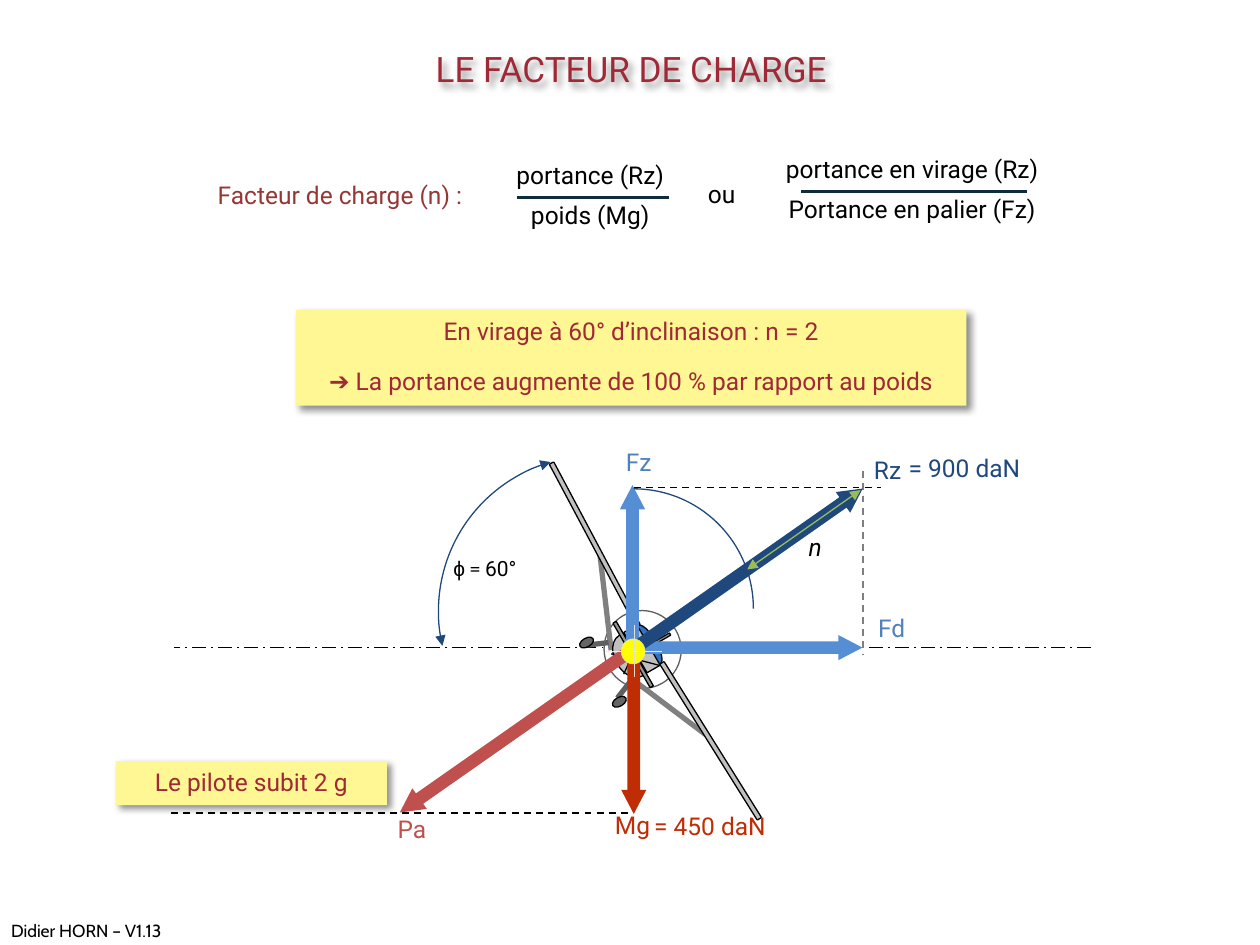
from lxml import etree
from pptx import Presentation
from pptx.dml.color import RGBColor
from pptx.enum.dml import MSO_LINE
from pptx.enum.shapes import MSO_CONNECTOR, MSO_SHAPE
from pptx.enum.text import MSO_ANCHOR, PP_ALIGN
from pptx.oxml.ns import qn
from pptx.util import Inches, Pt

STRAIGHT = MSO_CONNECTOR.STRAIGHT
ARC, OVAL, RECT = MSO_SHAPE.ARC, MSO_SHAPE.OVAL, MSO_SHAPE.RECTANGLE
BAR, UP_ARROW = MSO_SHAPE.ROUNDED_RECTANGLE, MSO_SHAPE.UP_ARROW
DASH, DASH_DOT = MSO_LINE.DASH, MSO_LINE.LONG_DASH_DOT
LEFT, CENTER, TOP = PP_ALIGN.LEFT, PP_ALIGN.CENTER, MSO_ANCHOR.TOP
BLACK, RED, NAVY, SKY, BLUE = "000000", "9F2936", "1F497D", "558ED5", "4F81BD"
BRICK, RUST, YELLOW, RULE = "C0504D", "C02C04", "FFF793", "0E2C3E"
SILVER, GREY, DARK_GREY, CREAM = "C0C0C0", "969696", "5F5F5F", "E3DED1"


def color(value):
    """Turn a hex string into a colour."""
    return RGBColor.from_string(value)


def style_line(line, value, width, dash=None, heads=False):
    """Set colour, width, dash and arrowheads of a line."""
    line.color.rgb = color(value)
    line.width = Pt(width)
    if dash:
        line.dash_style = dash
    if heads:
        element = line.color._xFill.getparent()
        for name in ("a:headEnd", "a:tailEnd"):
            etree.SubElement(element, qn(name), type="triangle")


def add_shadow(shape):
    """Give a shape a soft shadow to the lower right."""
    shape.shadow.inherit = False
    effects = shape._element.spPr.find(qn("a:effectLst"))
    outer = etree.SubElement(effects, qn("a:outerShdw"), blurRad=str(Pt(4)),
                             dist=str(Pt(3)), dir="2700000", algn="tl", rotWithShape="0")
    black = etree.SubElement(outer, qn("a:srgbClr"), val=BLACK)
    etree.SubElement(black, qn("a:alpha"), val="43000")


def write(shape, paragraphs, value, size=14, align=CENTER, after=0, font="Roboto", italic=False):
    """Fill a text frame; a paragraph is a string or a list of (text, font) runs."""
    frame = shape.text_frame
    frame.word_wrap = True
    frame.vertical_anchor = TOP
    margins = {"margin_left": 0.1, "margin_right": 0.1, "margin_top": 0.05, "margin_bottom": 0.05}
    for name, inches in margins.items():
        setattr(frame, name, Inches(inches))
    for index, content in enumerate(paragraphs):
        paragraph = frame.add_paragraph() if index else frame.paragraphs[0]
        paragraph.alignment = align
        paragraph.space_after = Pt(after)
        runs = [(content, font)] if isinstance(content, str) else content
        for text, face in runs:
            run = paragraph.add_run()
            run.text = text
            formats = {"name": face, "size": Pt(size), "bold": False, "italic": italic}
            for name, setting in formats.items():
                setattr(run.font, name, setting)
            run.font.color.rgb = color(value)


class Region:
    """A part of the slide whose contents are placed from its top left corner."""

    def __init__(self, slide, left, top):
        """Keep the slide and the corner in inches."""
        self.shapes, self.left, self.top = slide.shapes, left, top

    def place(self, left, top):
        """Give a slide position for a point of the region."""
        return Inches(self.left + left), Inches(self.top + top)

    def line(self, start, end, value, width, **style):
        """Draw a straight line."""
        line = self.shapes.add_connector(STRAIGHT, *self.place(*start), *self.place(*end))
        style_line(line.line, value, width, **style)
        etree.SubElement(line._element.spPr, qn("a:effectLst"))

    def shape(self, kind, box, fill=None, outline=None, width=0.75, rotation=0,
              adjustments=(), heads=False):
        """Draw a preset shape in a (left, top, width, height) box."""
        left, top, wide, high = box
        shape = self.shapes.add_shape(kind, *self.place(left, top), Inches(wide), Inches(high))
        shape.rotation = rotation
        shape.shadow.inherit = False
        for index, amount in enumerate(adjustments):
            shape.adjustments[index] = amount
        if fill:
            shape.fill.solid()
            shape.fill.fore_color.rgb = color(fill)
        else:
            shape.fill.background()
        if outline:
            style_line(shape.line, outline, width, heads=heads)
        else:
            shape.line.fill.background()
        return shape

    def text(self, box, paragraphs, value, **formats):
        """Write a text box."""
        left, top, wide, high = box
        shape = self.shapes.add_textbox(*self.place(left, top), Inches(wide), Inches(high))
        write(shape, paragraphs, value, **formats)

    def arc(self, center, radius, start, end, heads=False):
        """Draw a circular arc between two angles in degrees."""
        box = (center[0] - radius, center[1] - radius, 2 * radius, 2 * radius)
        self.shape(ARC, box, outline=NAVY, adjustments=(start * 0.6, end * 0.6), heads=heads)


def add_title(slide, left, top, width, height):
    """Move and format the title."""
    title = slide.shapes.title
    box = {"left": left, "top": top, "width": width, "height": height}
    for name, inches in box.items():
        setattr(title, name, Inches(inches))
    write(title, ["LE FACTEUR DE CHARGE"], RED, size=20)
    add_shadow(title)


def add_formula(region):
    """Write the two fractions that define the load factor."""
    region.text((0.03, 0.18, 2.33, 0.34), ["Facteur de charge (n) :"], "953735", align=LEFT)
    region.text((2.18, 0.02, 1.81, 0.66), ["portance (Rz)", "poids (Mg)"], BLACK, after=6)
    region.line((2.5, 0.37), (3.71, 0.37), RULE, 1.5)
    region.text((3.92, 0.17, 0.58, 0.34), ["ou"], BLACK, align=LEFT)
    region.text((4.48, -0.03, 2.32, 0.66),
                ["portance en virage (Rz)", "Portance en palier (Fz)"], BLACK, after=6)
    region.line((4.76, 0.32), (6.55, 0.32), RULE, 1.5)


def add_callout(region, width, height, paragraphs):
    """Draw a yellow box with a shadow and red text."""
    shape = region.shape(RECT, (0, 0, width, height), YELLOW)
    add_shadow(shape)
    write(shape, paragraphs, RED, after=12)


def add_aircraft(region):
    """Draw the banked aircraft seen from the front."""
    region.shape(OVAL, (0.79, 0.85, 0.62, 0.61), outline=DARK_GREY, rotation=60)
    for start, end in (((0.85, 1.16), (0.76, 0.39)), ((0.99, 1.37), (1.6, 1.83))):
        region.line(start, end, "808080", 3)
    body = (
        (BAR, (0.91, 1.86, 1.46, 0.04), SILVER, 58),
        (OVAL, (0.98, 1.06, 0.35, 0.11), "3172C4", 60),
        (OVAL, (0.82, 1.08, 0.37, 0.25), SILVER, 60),
        (RECT, (0.91, 1.09, 0.37, 0.12), SILVER, 60),
        (BAR, (0.88, 1.14, 0.47, 0.02), GREY, 330),
        (BAR, (-0.01, 0.3, 1.46, 0.04), SILVER, 62),
        (BAR, (0.73, 1.18, 0.59, 0.03), GREY, 60),
    )
    for kind, box, fill, rotation in body:
        region.shape(kind, box, fill, BLACK, rotation=rotation)
    edges = (((1, 1.21), (0.85, 1.19)), ((1.01, 1.22), (0.95, 1.35)),
             ((1, 1.17), (1.06, 0.98)), ((1.04, 1.23), (1.23, 1.28)))
    for start, end in edges:
        region.line(start, end, BLACK, 0.75)
    wheels = (((0.83, 1.1), (0.66, 1.12), (0.62, 1.04)), ((1.01, 1.4), (0.9, 1.54), (0.88, 1.51)))
    for start, end, corner in wheels:
        region.line(start, end, DARK_GREY, 3)
        region.shape(OVAL, (*corner, 0.07, 0.12), "656565", BLACK, rotation=60)


def add_forces(region):
    """Draw the force arrows, their guides and their labels."""
    for start, end in (((4.03, 0.37), (5.99, 0.37)), ((0.36, 2.95), (4.01, 2.95))):
        region.line(start, end, BLACK, 1, dash=DASH)
    region.line((5.85, 0.24), (5.85, 1.69), "7F7F7F", 1, dash=DASH)
    region.arc((3.71, 1.35), 1.23, 167, 254, heads=True)
    forces = ((3.07, 2.32, 2.19, 235, BRICK), (4.97, 1.64, 1.75, 90, SKY),
              (4.02, 0.99, 1.28, 0, SKY), (4.03, 2.32, 1.28, 180, RUST),
              (4.93, 1.02, 2.24, 55, NAVY))
    for x, y, length, rotation, fill in forces:
        region.shape(UP_ARROW, (x - 0.1, y - length / 2, 0.2, length), fill,
                     rotation=rotation, adjustments=(0.5, 0.96))
    region.shape(OVAL, (3.93, 1.57, 0.19, 0.2), "FFFF00", CREAM, 0.25)
    region.line((4.03, 1.46), (4.03, 1.87), CREAM, 0.25)
    region.line((3.81, 1.67), (4.25, 1.67), "EEECE1", 0.25)
    region.line((4.93, 1.02), (5.83, 0.39), "9BBB59", 0.75, heads=True)
    region.arc((4.03, 1.33), 0.95, 270, 0)
    labels = ((1.97, 2.91, 0.6, "Pa", BRICK), (3.75, 0, 0.64, "Fz", BLUE),
              (3.2, 2.88, 1.64, "Mg", RUST), (3.97, 2.89, 1.33, "= 450 daN", RUST),
              (5.63, 0.06, 0.83, "Rz", NAVY), (5.99, 0.05, 1.33, "= 900 daN", NAVY))
    for left, top, width, text, value in labels:
        region.text((left, top, width, 0.34), [text], value)
    region.text((5.87, 1.32, 0.88, 0.34), ["Fd"], BLUE, align=LEFT)
    region.text((5.32, 0.67, 0.63, 0.53), ["n"], BLACK, align=LEFT, italic=True)
    angle = [("ϕ", "Arial"), (" = ", "Calibri"), ("60°", "Roboto")]
    region.text((2.5, 0.86, 1.25, 0.3), [angle], BLACK, size=12, align=LEFT)


def main():
    """Build and save the slide."""
    presentation = Presentation()
    presentation.slide_width, presentation.slide_height = Inches(10), Inches(7.5)
    slide = presentation.slides.add_slide(presentation.slide_layouts[5])
    add_title(slide, 2.25, 0.33, 5.52, 0.39)
    Region(slide, 0, 7.25).text((-0.01, 0, 1.5, 0.27), ["Didier HORN – V1.13 ©"], BLACK,
                                size=10, align=LEFT, font="Cabin")
    add_formula(Region(slide, 1.6, 1.2))
    Region(slide, 1.38, 5.14).line((7.28, 0), (0, 0), BLACK, 1, dash=DASH_DOT)
    add_aircraft(Region(slide, 4, 4))
    add_forces(Region(slide, 1, 3.5))
    effect = [("➔", "Arial"), (" La portance augmente de 100 % par rapport au poids", "Roboto")]
    add_callout(Region(slide, 2.35, 2.46), 5.32, 0.76,
                ["En virage à 60° d’inclinaison : n = 2", effect])
    add_callout(Region(slide, 0.92, 6.04), 2.15, 0.35, ["Le pilote subit 2 g"])
    presentation.save("out.pptx")


if __name__ == "__main__":
    main()
